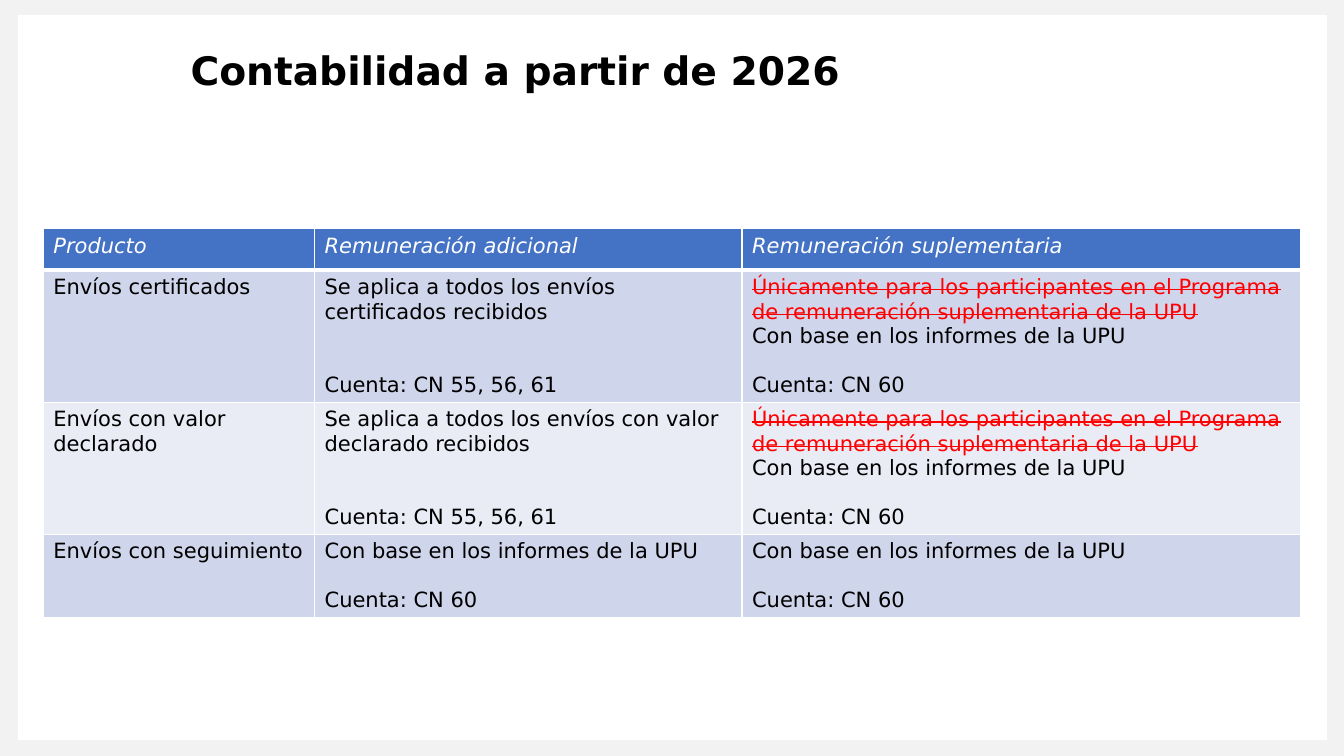
from lxml.etree import SubElement
from pptx import Presentation
from pptx.dml.color import RGBColor
from pptx.enum.shapes import MSO_SHAPE
from pptx.enum.text import MSO_ANCHOR, PP_ALIGN
from pptx.oxml.ns import qn
from pptx.util import Inches, Pt


def color(hex_code):
    return RGBColor.from_string(hex_code)


def write(paragraph, text, size=15, ink="000000", bold=False, italic=False,
          strike=False, before=0, spacing=None):
    paragraph.alignment = PP_ALIGN.LEFT
    paragraph.space_before = Pt(before)
    paragraph.line_spacing = spacing
    run = paragraph.add_run()
    run.text = text
    run.font.name = "DejaVu Sans"
    run.font.size = Pt(size)
    run.font.bold = bold
    run.font.italic = italic
    run.font.color.rgb = color(ink)
    if strike:
        run._r.get_or_add_rPr().set("strike", "sngStrike")


presentation = Presentation()
presentation.slide_width = Inches(13.33)
presentation.slide_height = Inches(7.5)
slide = presentation.slides.add_slide(presentation.slide_layouts[5])

for left, top, width, height, tone in [
    (0, 0, 13.33, 7.5, "F2F2F2"),
    (0.18, 0.15, 12.98, 7.19, "FFFFFF"),
]:
    panel = slide.shapes.add_shape(
        MSO_SHAPE.RECTANGLE, Inches(left), Inches(top), Inches(width), Inches(height))
    panel.shadow.inherit = False
    panel.fill.solid()
    panel.fill.fore_color.rgb = color(tone)
    panel.line.fill.background()

title = slide.shapes.title
slide.shapes._spTree.append(title._element)
title.left, title.top = Inches(1.79), Inches(0.41)
title.width, title.height = Inches(11.06), Inches(0.63)
title.text_frame.vertical_anchor = MSO_ANCHOR.MIDDLE
write(title.text_frame.paragraphs[0], "Contabilidad a partir de 2026",
      size=28, bold=True, spacing=0.9)

LINE = 17.46
header = {"ink": "FFFFFF", "italic": True}
removed = ("Únicamente para los participantes en el Programa de remuneración "
           "suplementaria de la UPU", {"ink": "FF0000", "strike": True})
reports = ("Con base en los informes de la UPU", {})
account_60 = ("Cuenta: CN 60", {"before": LINE})
account_55 = ("Cuenta: CN 55, 56, 61", {"before": 2 * LINE})

products = [
    [[("Producto", header)],
     [("Remuneración adicional", header)],
     [("Remuneración suplementaria", header)]],
    [[("Envíos certificados", {})],
     [("Se aplica a todos los envíos certificados recibidos", {}), account_55],
     [removed, reports, account_60]],
    [[("Envíos con valor declarado", {})],
     [("Se aplica a todos los envíos con valor declarado recibidos", {}), account_55],
     [removed, reports, account_60]],
    [[("Envíos con seguimiento", {})],
     [reports, account_60],
     [reports, account_60]],
]
column_widths = [2.69, 4.24, 5.54]
row_heights = [0.41, 1.31, 1.31, 0.82]
row_fills = ["4472C4", "CFD5EA", "E9EBF5", "CFD5EA"]

accounting = slide.shapes.add_table(
    len(row_heights), len(column_widths), Inches(0.43), Inches(2.27),
    Inches(sum(column_widths)), Inches(sum(row_heights))).table
for column, width in zip(accounting.columns, column_widths):
    column.width = Inches(width)

for r, (product, height, tone) in enumerate(zip(products, row_heights, row_fills)):
    accounting.rows[r].height = Inches(height)
    for c, entries in enumerate(product):
        cell = accounting.cell(r, c)
        borders = cell._tc.get_or_add_tcPr()
        for side in ("lnL", "lnR", "lnT", "lnB"):
            thick = (r, side) in [(0, "lnB"), (1, "lnT")]
            border = SubElement(borders, qn(f"a:{side}"), w=str(Pt(3 if thick else 1)))
            SubElement(SubElement(border, qn("a:solidFill")), qn("a:srgbClr"), val="FFFFFF")
        cell.fill.solid()
        cell.fill.fore_color.rgb = color(tone)
        for i, (text, style) in enumerate(entries):
            frame = cell.text_frame
            write(frame.add_paragraph() if i else frame.paragraphs[0], text, **style)

presentation.save("out.pptx")
